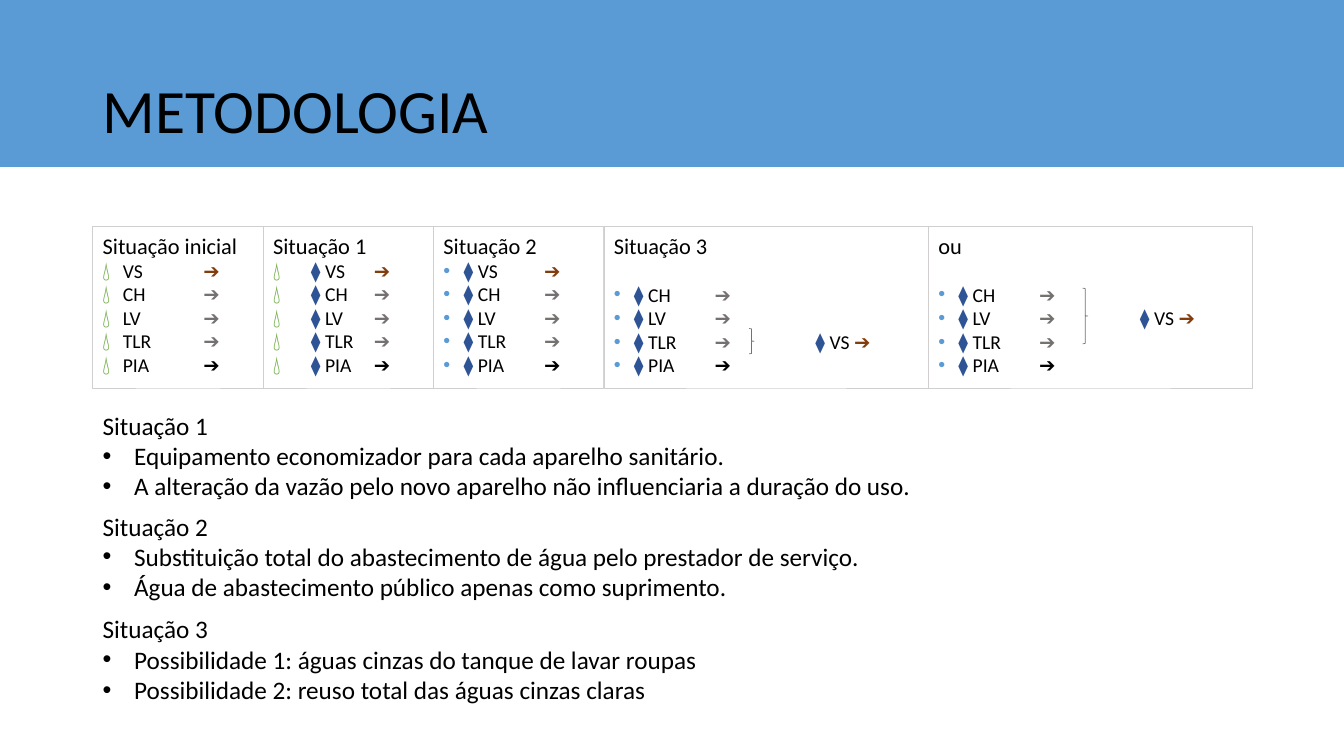
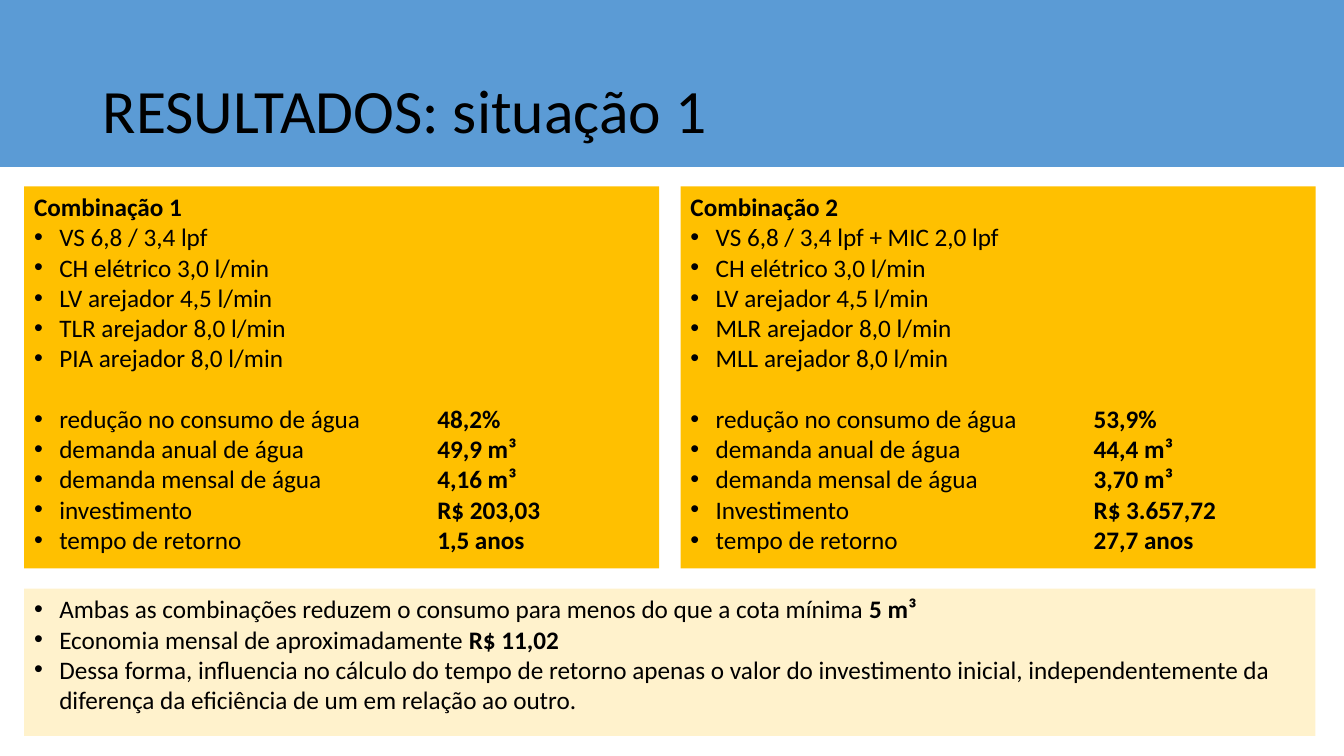
from lxml.etree import SubElement
from pptx import Presentation
from pptx.dml.color import RGBColor
from pptx.enum.shapes import MSO_SHAPE
from pptx.enum.text import MSO_ANCHOR, MSO_AUTO_SIZE, PP_ALIGN
from pptx.oxml.ns import qn
from pptx.util import Pt

FONT = "Calibri"
COLORS = {
    "black": "000000", "white": "FFFFFF", "blue": "5B9BD5", "navy": "2F5496",
    "green": "70AD47", "brown": "833C0B", "gray": "767171", "border": "D0CECE",
    "amber": "FFC000", "cream": "FFF2CC",
}
SLIDE_WIDTH, SLIDE_HEIGHT = 960, 540
LEFT, CONTENT_WIDTH = 66.25, 828
BAND_HEIGHT = 118.8
TITLE_BOX = (LEFT, 28.8, CONTENT_WIDTH, 104.4)

# Situation panels on the first slide
SITUATION_TOP, SITUATION_HEIGHT = 162, 115.2
NARROW, WIDE = 121.7, 231.8
ROW_HEIGHT = 17
FIXTURES = ["VS", "CH", "LV", "TLR", "PIA"]
ARROW_COLORS = {"VS": "brown", "PIA": "black"}
# heading, width, bullet, bullet colour, indent, diamonds shown,
# fixture that feeds VS, brace (left, top, height) inside the panel
SITUATIONS = [
    ("Situação inicial", NARROW, "💧", "green", 14.4, False, None, None),
    ("Situação 1", NARROW, "💧", "green", 27, True, None, None),
    ("Situação 2", NARROW, "•", "blue", 14.4, True, None, None),
    ("Situação 3", WIDE, "•", "blue", 14.4, True, "TLR", (103.7, 72.7, 18)),
    ("ou", WIDE, "•", "blue", 14.4, True, "LV", (110.2, 43.9, 39.6)),
]
# top, height, heading, items
EXPLANATIONS = [
    (289.4, 72, "Situação 1", [
        "Equipamento economizador para cada aparelho sanitário.",
        "A alteração da vazão pelo novo aparelho não influenciaria a duração do uso."]),
    (361.4, 73.4, "Situação 2", [
        "Substituição total do abastecimento de água pelo prestador de serviço.",
        "Água de abastecimento público apenas como suprimento."]),
    (434.9, 76.3, "Situação 3", [
        "Possibilidade 1: águas cinzas do tanque de lavar roupas",
        "Possibilidade 2: reuso total das águas cinzas claras"]),
]

# Result panels on the second slide
MARGIN, RESULT_WIDTH, RESULT_GAP = 17.3, 453.6, 15.2
RESULT_TOP, RESULT_HEIGHT = 133.2, 272.9
CONCLUSION_TOP, CONCLUSION_HEIGHT = 420.5, 105.1
RESULTS = [
    ("Combinação 1",
     ["VS 6,8 / 3,4 lpf", "CH elétrico 3,0 l/min", "LV arejador 4,5 l/min",
      "TLR arejador 8,0 l/min", "PIA arejador 8,0 l/min"],
     [("redução no consumo de água", "48,2%"),
      ("demanda anual de água", "49,9 m³"),
      ("demanda mensal de água", "4,16 m³"),
      ("investimento", "R$ 203,03"),
      ("tempo de retorno", "1,5 anos")]),
    ("Combinação 2",
     ["VS 6,8 / 3,4 lpf + MIC 2,0 lpf", "CH elétrico 3,0 l/min",
      "LV arejador 4,5 l/min", "MLR arejador 8,0 l/min", "MLL arejador 8,0 l/min"],
     [("redução no consumo de água", "53,9%"),
      ("demanda anual de água", "44,4 m³"),
      ("demanda mensal de água", "3,70 m³"),
      ("Investimento", "R$ 3.657,72"),
      ("tempo de retorno", "27,7 anos")]),
]
CONCLUSIONS = [
    ("Ambas as combinações reduzem o consumo para menos do que a cota mínima ", "5 m³"),
    ("Economia mensal de aproximadamente ", "R$ 11,02"),
    ("Dessa forma, influencia no cálculo do tempo de retorno apenas o valor do "
     "investimento inicial, independentemente da diferença da eficiência de um "
     "em relação ao outro.", ""),
]


def color(name):
    return RGBColor.from_string(COLORS[name])


def add_run(paragraph, text, size, color_name="black", bold=False):
    run = paragraph.add_run()
    run.text = text
    run.font.name = FONT
    run.font.size = Pt(size)
    run.font.bold = bold
    run.font.color.rgb = color(color_name)


def add_box(slide, preset, box, fill=None, line=None, line_width=0.5):
    shape = slide.shapes.add_shape(preset, *(Pt(length) for length in box))
    shape.shadow.inherit = False
    if fill:
        shape.fill.solid()
        shape.fill.fore_color.rgb = color(fill)
    else:
        shape.fill.background()
    if line:
        shape.line.color.rgb = color(line)
        shape.line.width = Pt(line_width)
    else:
        shape.line.fill.background()
    return shape


def add_panel(slide, box, fill, line=None):
    """Add a rectangle for top-left text and return its text frame."""
    frame = add_box(slide, MSO_SHAPE.RECTANGLE, box, fill, line).text_frame
    frame.word_wrap = True
    frame.vertical_anchor = MSO_ANCHOR.TOP
    return frame


def add_paragraph(frame, runs, size, space_before=0):
    """Add a paragraph; each run is (text, colour, bold), the last two optional."""
    first = frame.paragraphs[0]
    paragraph = frame.add_paragraph() if first.runs else first
    paragraph.alignment = PP_ALIGN.LEFT
    paragraph.space_before = Pt(space_before)
    for run in runs:
        add_run(paragraph, run[0], size, *run[1:])
    return paragraph


def set_bullet(paragraph, indent, character="•", color_name="black", tabs=()):
    properties = paragraph._p.get_or_add_pPr()
    properties.set("marL", str(Pt(indent)))
    properties.set("indent", str(-Pt(indent)))
    bullet_color = SubElement(properties, qn("a:buClr"))
    SubElement(bullet_color, qn("a:srgbClr"), val=COLORS[color_name])
    SubElement(properties, qn("a:buFont"), typeface="Arial")
    SubElement(properties, qn("a:buChar"), char=character)
    if tabs:
        tab_list = SubElement(properties, qn("a:tabLst"))
        for tab in tabs:
            SubElement(tab_list, qn("a:tab"), pos=str(Pt(tab)), algn="l")


def add_titled_slide(presentation, title_text):
    slide = presentation.slides.add_slide(presentation.slide_layouts[5])
    # Band, moved behind the title
    band = add_box(slide, MSO_SHAPE.RECTANGLE, (0, 0, SLIDE_WIDTH, BAND_HEIGHT),
                   "blue", "blue", 1)
    slide.shapes._spTree.insert(2, band._element)
    # Title
    title = slide.shapes.title
    title.left, title.top, title.width, title.height = map(Pt, TITLE_BOX)
    frame = title.text_frame
    frame.auto_size = MSO_AUTO_SIZE.NONE
    frame.word_wrap = True
    frame.vertical_anchor = MSO_ANCHOR.MIDDLE
    add_paragraph(frame, [(title_text,)], 44).line_spacing = 0.9
    return slide


def add_situation(slide, left, situation):
    heading, width, bullet, bullet_color, indent, diamonds, feeder, brace = situation
    frame = add_panel(slide, (left, SITUATION_TOP, width, SITUATION_HEIGHT),
                      "white", "border")
    add_paragraph(frame, [(heading,)], 16)
    diamond = [("⧫ ", "navy")] if diamonds else []
    # With a feeder, VS moves from the first row to the feeder's row
    fixtures = FIXTURES[1:] if feeder else FIXTURES
    for index, fixture in enumerate(fixtures):
        arrow_color = ARROW_COLORS.get(fixture, "gray")
        runs = diamond + [(fixture + "\t",), ("➔", arrow_color, True)]
        if fixture == feeder:
            runs += [("\t",), *diamond, ("VS ",), ("➔", "brown", True)]
        gap = ROW_HEIGHT if feeder and index == 0 else 0
        paragraph = add_paragraph(frame, runs, 14, gap)
        set_bullet(paragraph, indent, bullet, bullet_color, tabs=(72, 144))
    if brace:
        brace_left, brace_top, brace_height = brace
        add_box(slide, MSO_SHAPE.RIGHT_BRACE,
                (left + brace_left, SITUATION_TOP + brace_top, 3.6, brace_height),
                line="gray")


def add_explanation(slide, top, height, heading, items):
    frame = add_panel(slide, (LEFT, top, CONTENT_WIDTH, height), "white")
    add_paragraph(frame, [(heading,)], 18)
    for item in items:
        set_bullet(add_paragraph(frame, [(item,)], 18), 22.5)


def add_result(slide, left, heading, devices, measures):
    frame = add_panel(slide, (left, RESULT_TOP, RESULT_WIDTH, RESULT_HEIGHT), "amber")
    add_paragraph(frame, [(heading, "black", True)], 18)
    for device in devices:
        set_bullet(add_paragraph(frame, [(device,)], 18), 18)
    for index, (label, value) in enumerate(measures):
        runs = [(label + "\t",), (value, "black", True)]
        paragraph = add_paragraph(frame, runs, 18, 0 if index else 21.7)
        set_bullet(paragraph, 18, tabs=(288,))


def add_conclusions(slide):
    width = 2 * RESULT_WIDTH + RESULT_GAP
    frame = add_panel(slide, (MARGIN, CONCLUSION_TOP, width, CONCLUSION_HEIGHT), "cream")
    for text, value in CONCLUSIONS:
        runs = [(text,)] + ([(value, "black", True)] if value else [])
        set_bullet(add_paragraph(frame, runs, 18), 18)


def main():
    presentation = Presentation()
    presentation.slide_width = Pt(SLIDE_WIDTH)
    presentation.slide_height = Pt(SLIDE_HEIGHT)

    # Methodology
    slide = add_titled_slide(presentation, "METODOLOGIA")
    left = LEFT
    for situation in SITUATIONS:
        add_situation(slide, left, situation)
        left += situation[1]
    for explanation in EXPLANATIONS:
        add_explanation(slide, *explanation)

    # Results
    slide = add_titled_slide(presentation, "RESULTADOS: situação 1")
    for index, result in enumerate(RESULTS):
        add_result(slide, MARGIN + index * (RESULT_WIDTH + RESULT_GAP), *result)
    add_conclusions(slide)

    presentation.save("out.pptx")


if __name__ == "__main__":
    main()
